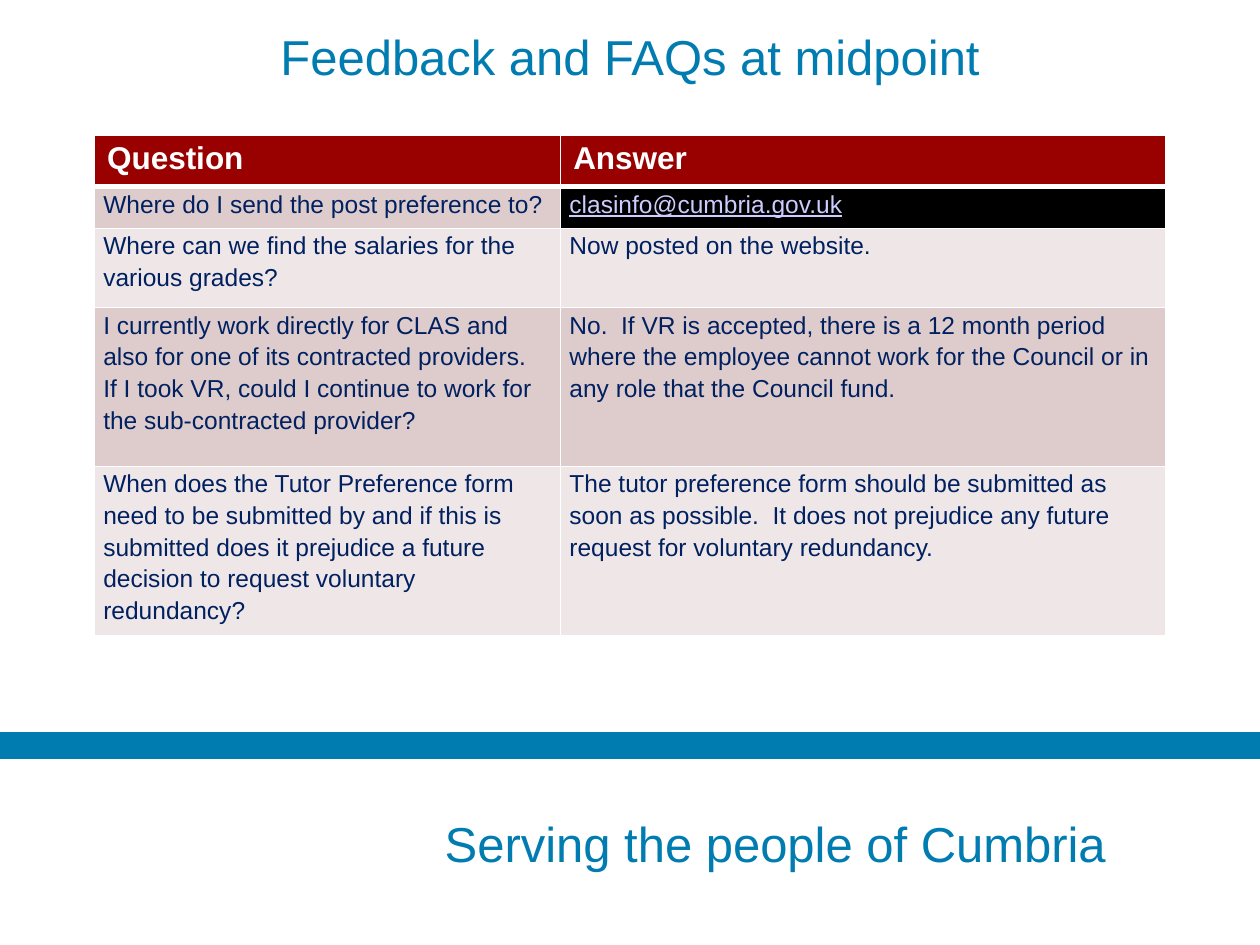
"""Build the midpoint feedback and FAQ slide."""
from lxml.etree import SubElement
from pptx import Presentation
from pptx.dml.color import RGBColor
from pptx.enum.text import MSO_ANCHOR, MSO_AUTO_SIZE, PP_ALIGN
from pptx.oxml.ns import qn
from pptx.util import Pt

COLORS = {
    "blue": "007CB0", "navy": "002060", "white": "FFFFFF", "red": "990000",
    "dark": "DECCCC", "light": "EFE7E7", "black": "000000", "link": "CCCCFF",
}
HEAD = {"size": Pt(18), "bold": True}
BODY = {"size": Pt(14), "bold": False}
LARGE = {"size": Pt(28), "bold": False}
WIDTHS = [266.4, 345.6]
HEIGHTS = [29.5, 23.8, 45.4, 90.7, 96.5]
ROWS = [
    ("Question", "Answer"),
    ("Where do I send the post preference to?", "clasinfo@cumbria.gov.uk"),
    ("Where can we find the salaries for the various grades?",
     "Now posted on the website."),
    ("I currently work directly for CLAS and also for one of its contracted "
     "providers.  If I took VR, could I continue to work for the "
     "sub-contracted provider?",
     "No.  If VR is accepted, there is a 12 month period where the employee "
     "cannot work for the Council or in any role that the Council fund."),
    ("When does the Tutor Preference form need to be submitted by and if this "
     "is submitted does it prejudice a future decision to request voluntary "
     "redundancy?",
     "The tutor preference form should be submitted as soon as possible.  It "
     "does not prejudice any future request for voluntary redundancy."),
]


class Deck:
    def __init__(self, font):
        self.font = font
        self.file = Presentation()
        self.file.slide_width, self.file.slide_height = Pt(720), Pt(540)
        self.slide = self.file.slides.add_slide(self.file.slide_layouts[5])

    def color(self, name):
        return RGBColor.from_string(COLORS[name])

    def label(self, frame, text, color, style, **layout):
        line = frame.paragraphs[0]
        for key, value in layout.items():
            setattr(line, key, value)
        run = line.add_run()
        run.text = text
        for key, value in {"name": self.font, **style}.items():
            setattr(run.font, key, value)
        run.font.color.rgb = self.color(color)

    def title(self, text, *box):
        shape = self.slide.shapes.title
        for key, value in zip(("left", "top", "width", "height"), box):
            setattr(shape, key, Pt(value))
        frame = shape.text_frame
        frame.auto_size = MSO_AUTO_SIZE.NONE
        frame.vertical_anchor = MSO_ANCHOR.MIDDLE
        self.label(frame, text, "blue", LARGE, alignment=PP_ALIGN.CENTER)

    def text(self, text, *box):
        frame = self.slide.shapes.add_textbox(*map(Pt, box)).text_frame
        frame.word_wrap = True
        self.label(frame, text, "blue", LARGE)

    def line(self, x1, y1, x2, y2, width):
        shape = self.slide.shapes.add_connector(1, *map(Pt, (x1, y1, x2, y2)))
        shape.line.color.rgb = self.color("blue")
        shape.line.width = Pt(width)
        SubElement(shape._element.spPr, qn("a:effectLst"))

    def edges(self, cell, **widths):
        props = cell._tc.get_or_add_tcPr()
        for side in "LRTB":
            width = str(Pt(widths.get(side, 1)))
            edge = SubElement(props, qn(f"a:ln{side}"), w=width)
            fill = SubElement(edge, qn("a:solidFill"))
            SubElement(fill, qn("a:srgbClr"), val=COLORS["white"])

    def cell(self, cell, row, text):
        head, mail = row == 0, "@" in text
        self.edges(cell, T=3 if row == 1 else 1, B=3 if head else 1)
        side, top = (7.2, 3.6) if head else (5.04, 0)
        cell.margin_left = cell.margin_right = Pt(side)
        cell.margin_top = cell.margin_bottom = Pt(top)
        fill, color = "dark" if row % 2 else "light", "navy"
        if head:
            fill, color = "red", "white"
        elif mail:
            fill, color = "black", "link"
        cell.fill.solid()
        cell.fill.fore_color.rgb = self.color(fill)
        style = HEAD if head else {**BODY, "underline": mail}
        self.label(cell.text_frame, text, color, style,
                   line_spacing=1.0 if head else 1.15)

    def table(self, rows, left, top, widths, heights):
        size = map(Pt, (left, top, sum(widths), sum(heights)))
        table = self.slide.shapes.add_table(
            len(rows), len(widths), *size).table
        for col, width in zip(table.columns, widths):
            col.width = Pt(width)
        for i, (row, height) in enumerate(zip(table.rows, heights)):
            row.height = Pt(height)
            for cell, text in zip(row.cells, rows[i]):
                self.cell(cell, i, text)


def main():
    deck = Deck("Arial")
    deck.line(720, 426, 0, 426, 15)
    deck.text("Serving the people of Cumbria", 247, 461.5, 425.5, 41)
    deck.title("Feedback and FAQs at midpoint", 54, 15.1, 612, 34)
    deck.table(ROWS, 54, 77.2, WIDTHS, HEIGHTS)
    deck.file.save("out.pptx")


if __name__ == "__main__":
    main()
